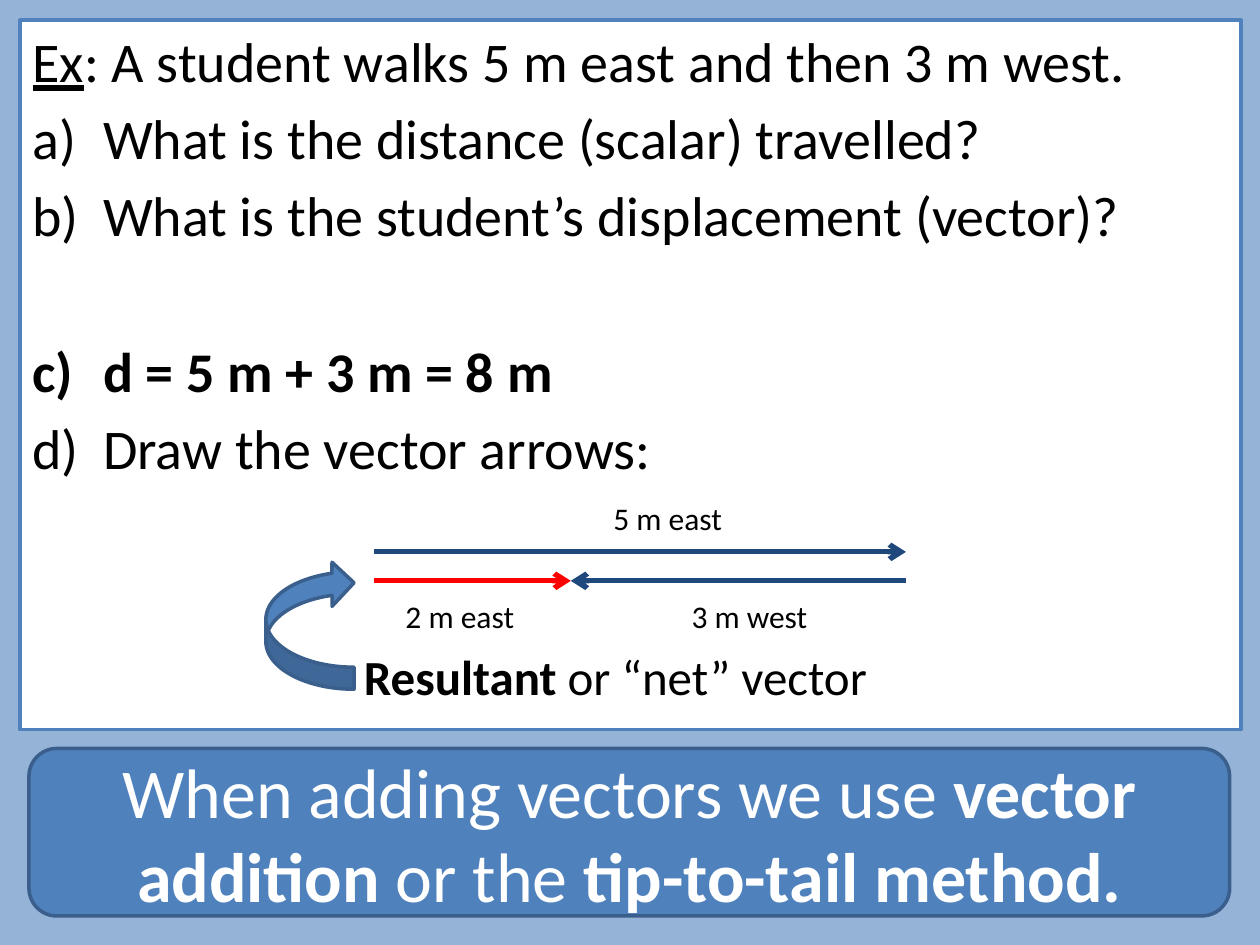
"""Build the vector addition slide on a grid of 100 columns by 75 rows."""
import pptx
import pptx.util
import pptx.dml.color
import pptx.enum.shapes
import pptx.enum.text
import pptx.oxml.ns
import lxml.etree

HUES = {"sky": "95B3D7", "blue": "4F81BD", "edge": "3A5F8C", "navy": "1F497D",
        "red": "FF0000", "white": "FFFFFF", "black": "000000"}
KINDS = pptx.enum.shapes.MSO_SHAPE
Pt = pptx.util.Pt
qn = pptx.oxml.ns.qn

deck = pptx.Presentation()
deck.slide_width = pptx.util.Inches(10)
deck.slide_height = pptx.util.Inches(7.5)
cell = deck.slide_width // 100
slide = deck.slides.add_slide(deck.slide_layouts[6])


def tint(name):
    return pptx.dml.color.RGBColor.from_string(HUES[name])


def write(para, parts, size, hue):
    for words, bold in parts:
        run = para.add_run()
        run.text = words
        run.font.name = "Calibri"
        run.font.size = Pt(size)
        run.font.bold = bold
        run.font.color.rgb = tint(hue)


slide.background.fill.solid()
slide.background.fill.fore_color.rgb = tint("sky")

shapes = {}
for name, kind, box, fill, edge in [
    ("panel", KINDS.RECTANGLE, (1.6, 1.6, 96.9, 56.3), "white", "blue"),
    ("curve", KINDS.CURVED_LEFT_ARROW, (21.1, 44.5, 7, 10.2), "blue", "edge"),
    ("banner", KINDS.ROUNDED_RECTANGLE, (2.3, 59.4, 95.3, 13.3), "blue", "edge"),
]:
    shape = slide.shapes.add_shape(kind, *[int(n * cell) for n in box])
    shape.shadow.inherit = False
    shape.fill.solid()
    shape.fill.fore_color.rgb = tint(fill)
    shape.line.color.rgb = tint(edge)
    shape.line.width = Pt(2)
    shapes[name] = shape
shapes["curve"].rotation = 180

frame = shapes["panel"].text_frame
frame.word_wrap = True
frame.vertical_anchor = pptx.enum.text.MSO_ANCHOR.TOP
for row, (parts, space, inset) in enumerate([
    ([("Ex", False), (": A student walks 5 m east and then 3 m west.", False)], 5.75, 3.8),
    ([("What is the distance (scalar) travelled?", False)], 5.75, 5.6),
    ([("What is the student’s displacement (vector)?", False)], 5.75, 5.6),
    ([("d = 5 m + 3 m = 8 m", True)], 50.5, 5.6),
    ([("Draw the vector arrows:", False)], 5.75, 5.6),
]):
    para = frame.paragraphs[0] if row == 0 else frame.add_paragraph()
    para.alignment = pptx.enum.text.PP_ALIGN.LEFT
    para.space_before = Pt(space)
    write(para, parts, 32, "black")
    props = para._p.get_or_add_pPr()
    props.set("marL", str(int(inset * cell)))
    props.set("indent", str(int(-inset * cell)))
    if row:
        lxml.etree.SubElement(props, qn("a:buFont"), typeface="+mj-lt")
        lxml.etree.SubElement(props, qn("a:buAutoNum"), type="alphaLcParenR")
frame.paragraphs[0].runs[0].font.underline = True

for start, end, row, hue in [(29.7, 71.9, 43.8, "navy"),
                             (71.9, 45.3, 46.1, "navy"),
                             (29.7, 45.3, 46.1, "red")]:
    arrow = slide.shapes.add_connector(
        pptx.enum.shapes.MSO_CONNECTOR.STRAIGHT,
        *[int(n * cell) for n in (start, row, end, row)])
    arrow.line.color.rgb = tint(hue)
    arrow.line.width = Pt(3)
    lxml.etree.SubElement(arrow.line._get_or_add_ln(), qn("a:tailEnd"), type="arrow")
    lxml.etree.SubElement(arrow._element.spPr, qn("a:effectLst"))

for parts, box, size in [
    ([("5 m east", False)], (47.7, 39.1, 10.7, 4), 18),
    ([("3 m west", False)], (53.9, 46.9, 11.3, 4), 18),
    ([("2 m east", False)], (31.2, 46.9, 10.7, 4), 18),
    ([("Resultant", True), (" or “net” vector", False)], (27.9, 50.8, 42.4, 5.7), 28),
]:
    label = slide.shapes.add_textbox(*[int(n * cell) for n in box]).text_frame
    label.word_wrap = False
    label.auto_size = pptx.enum.text.MSO_AUTO_SIZE.SHAPE_TO_FIT_TEXT
    write(label.paragraphs[0], parts, size, "black")

frame = shapes["banner"].text_frame
frame.word_wrap = True
frame.vertical_anchor = pptx.enum.text.MSO_ANCHOR.MIDDLE
frame.paragraphs[0].alignment = pptx.enum.text.PP_ALIGN.CENTER
write(frame.paragraphs[0],
      [("When adding vectors we use ", False), ("vector addition ", True),
       ("or the", False), (" tip-to-tail method.", True)], 40, "white")

deck.save("out.pptx")
